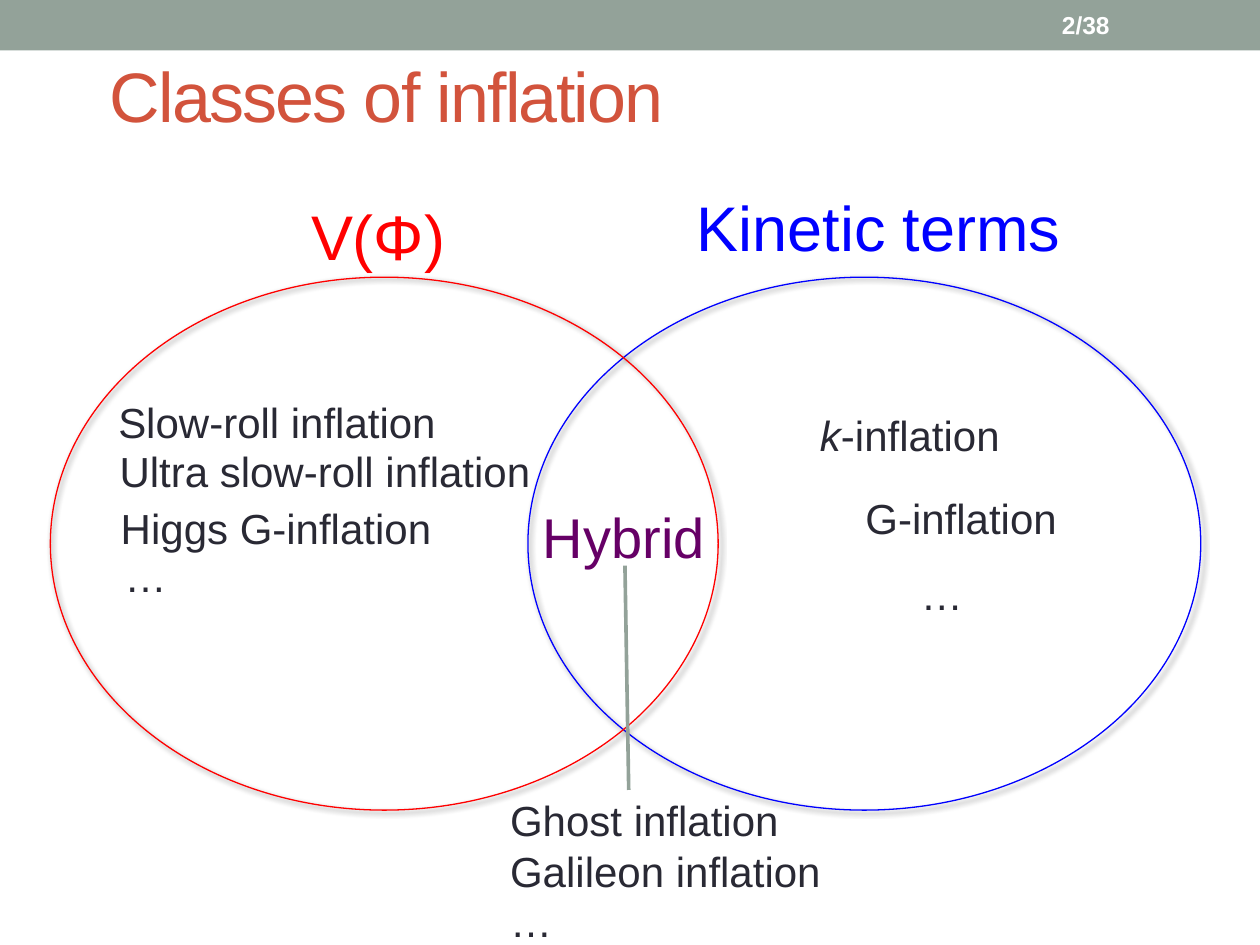
from dataclasses import dataclass

from lxml.etree import SubElement
from pptx import Presentation
from pptx.dml.color import RGBColor
from pptx.enum.shapes import MSO_CONNECTOR, MSO_SHAPE as Shape
from pptx.enum.text import MSO_ANCHOR as Anchor, MSO_AUTO_SIZE as AutoSize
from pptx.oxml.ns import qn
from pptx.util import Inches, Pt


@dataclass(frozen=True)
class Theme:
    font: str = "Arial"
    sage: str = "93A299"
    rust: str = "D2533C"
    white: str = "FFFFFF"
    ink: str = "292934"
    red: str = "FF0000"
    blue: str = "0000FF"
    purple: str = "660066"
    shadow: str = "000000"
    title_size: int = 40
    heading_size: int = 36
    overlap_size: int = 32
    body_size: int = 24
    page_size: int = 14


THEME = Theme()


@dataclass(frozen=True)
class Label:
    text: str
    left: float
    top: float
    width: float
    height: float = 0.5
    size: int = THEME.body_size
    color: str = THEME.ink
    wrap: bool = False
    bold: bool = False
    anchor: Anchor = Anchor.TOP
    italic_prefix: str = ""
    inset: float = 0.1
    spacing: int = 0  # hundredths of a point


@dataclass(frozen=True)
class Circle:
    left: float
    width: float
    color: str


CIRCLE_TOP, CIRCLE_HEIGHT = 2.2, 4.23

CIRCLES = [Circle(4.19, 5.34, THEME.blue), Circle(0.4, 5.3, THEME.red)]

HEADER = [
    Label("Classes of inflation", 0.5, 0.21, 9, 1.08, THEME.title_size, THEME.rust,
          wrap=True, anchor=Anchor.MIDDLE, inset=0.37, spacing=-100),
    Label("2/38", 8.33, 0.02, 1.17, 0.36, THEME.page_size, THEME.white,
          wrap=True, bold=True, anchor=Anchor.MIDDLE),
]

CLASS_LABELS = [
    # Circle headings
    Label("V(Φ)", 2.37, 1.52, 1.32, 0.71, THEME.heading_size, THEME.red, wrap=True),
    Label("Kinetic terms", 5.43, 1.45, 3.41, 0.71, THEME.heading_size, THEME.blue, wrap=True),
    # Potential-driven models
    Label("Slow-roll inflation", 0.84, 3.1, 2.75),
    Label("Ultra slow-roll inflation", 0.85, 3.49, 3.49),
    Label("Higgs G-inflation", 0.86, 3.94, 2.69),
    Label("…", 0.89, 4.32, 0.54),
    # Kinetic models
    Label("-inflation", 6.41, 3.2, 1.66, italic_prefix="k"),
    Label("G-inflation", 6.77, 3.86, 1.74),
    Label("…", 7.21, 4.46, 0.54),
    # Overlap and its examples
    Label("Hybrid", 4.21, 3.94, 1.5, 0.64, THEME.overlap_size, THEME.purple),
    Label("Ghost inflation\nGalileon inflation\n…", 3.95, 6.26, 2.69, 1.31),
]


def rgb(color: str) -> RGBColor:
    return RGBColor.from_string(color)


def draw_label(slide, label: Label) -> None:
    box = slide.shapes.add_textbox(Inches(label.left), Inches(label.top),
                                   Inches(label.width), Inches(label.height))
    frame = box.text_frame
    frame.word_wrap = label.wrap
    frame.auto_size = AutoSize.NONE if label.anchor == Anchor.MIDDLE else AutoSize.SHAPE_TO_FIT_TEXT
    frame.vertical_anchor = label.anchor
    frame.margin_left = Inches(label.inset)
    if label.italic_prefix:
        prefix = frame.paragraphs[0].add_run()
        prefix.text = label.italic_prefix
        prefix.font.italic = True
        frame.paragraphs[0].add_run().text = label.text
    else:
        frame.text = label.text
    for paragraph in frame.paragraphs:
        font = paragraph.font
        font.name, font.size, font.bold = THEME.font, Pt(label.size), label.bold
        font.color.rgb = rgb(label.color)
        if label.spacing:
            for run in paragraph.runs:
                run.font._element.set("spc", str(label.spacing))


def draw_circle(slide, circle: Circle) -> None:
    oval = slide.shapes.add_shape(Shape.OVAL, Inches(circle.left), Inches(CIRCLE_TOP),
                                  Inches(circle.width), Inches(CIRCLE_HEIGHT))
    oval.fill.background()
    oval.line.color.rgb = rgb(circle.color)
    oval.line.width = Pt(0.75)
    # Soft shadow towards the lower right
    oval.shadow.inherit = False
    effects = oval._element.spPr.find(qn("a:effectLst"))
    shadow = SubElement(effects, qn("a:outerShdw"), blurRad=str(Pt(3)), dist=str(Pt(2)),
                        dir=str(45 * 60000), rotWithShape="0")
    tint = SubElement(shadow, qn("a:srgbClr"), val=THEME.shadow)
    SubElement(tint, qn("a:alpha"), val="60000")


def draw_banner(slide, width: int) -> None:
    banner = slide.shapes.add_shape(Shape.RECTANGLE, 0, 0, width, Inches(0.4))
    banner.shadow.inherit = False
    banner.fill.solid()
    banner.fill.fore_color.rgb = rgb(THEME.sage)
    banner.line.fill.background()


def draw_pointer(slide) -> None:
    pointer = slide.shapes.add_connector(MSO_CONNECTOR.STRAIGHT, Inches(4.96), Inches(4.49),
                                         Inches(4.99), Inches(6.27))
    pointer.line.color.rgb = rgb(THEME.sage)
    pointer.line.width = Pt(2.08)
    SubElement(pointer._element.spPr, qn("a:effectLst"))


def main() -> None:
    deck = Presentation()
    deck.slide_width, deck.slide_height = Inches(10), Inches(7.5)
    slide = deck.slides.add_slide(deck.slide_layouts[6])

    # Header
    draw_banner(slide, deck.slide_width)
    for label in HEADER:
        draw_label(slide, label)

    # Venn diagram
    for circle in CIRCLES:
        draw_circle(slide, circle)
    draw_pointer(slide)
    for label in CLASS_LABELS:
        draw_label(slide, label)

    deck.save("out.pptx")


if __name__ == "__main__":
    main()
